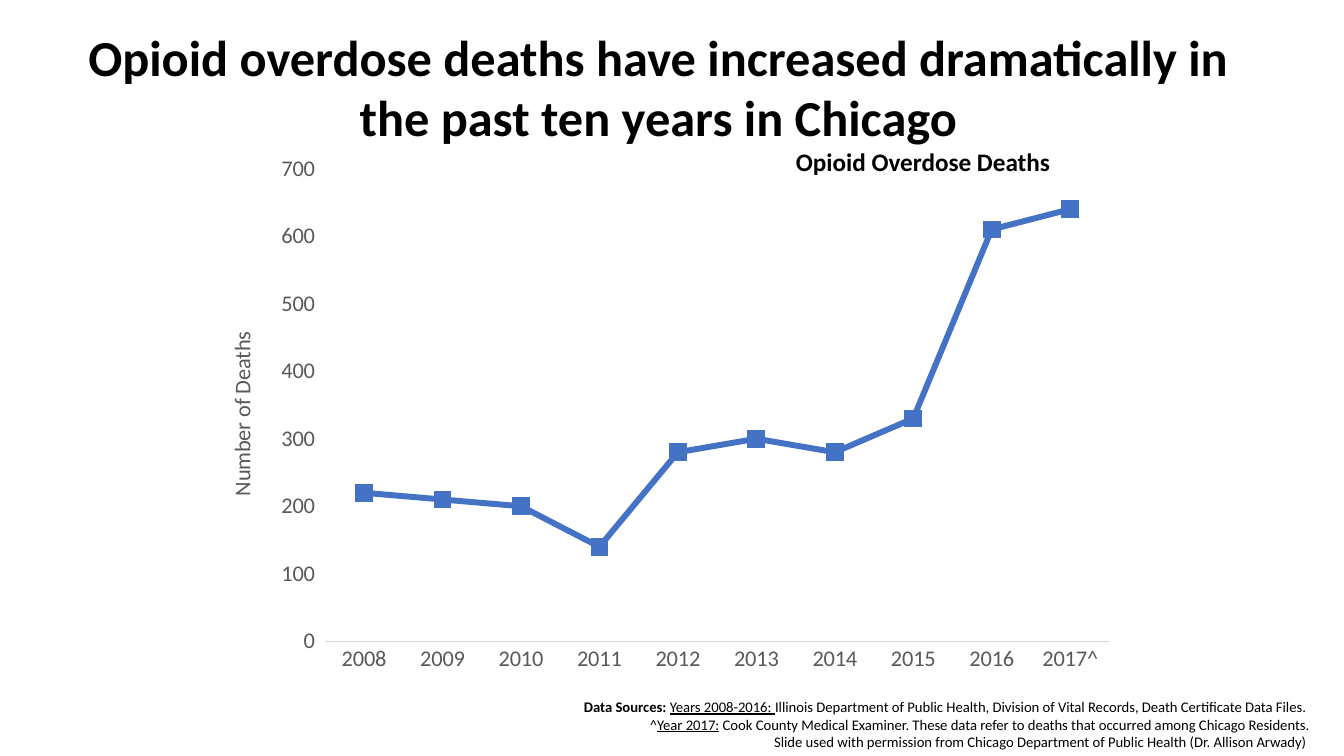
from lxml import etree
from pptx import Presentation
from pptx.chart.data import CategoryChartData
from pptx.dml.color import RGBColor
from pptx.enum.chart import XL_CHART_TYPE, XL_MARKER_STYLE, XL_TICK_MARK
from pptx.enum.text import MSO_AUTO_SIZE, PP_ALIGN
from pptx.oxml.ns import qn
from pptx.util import Pt

EMU_PER_PX = 914400 / 100.8
FONT = "Calibri"
BLACK = RGBColor(0x00, 0x00, 0x00)
GRAY = RGBColor(0x59, 0x59, 0x59)
LIGHT_GRAY = RGBColor(0xD9, 0xD9, 0xD9)
BLUE = RGBColor(0x44, 0x72, 0xC4)
LEFT, CENTER, RIGHT = PP_ALIGN.LEFT, PP_ALIGN.CENTER, PP_ALIGN.RIGHT
LINE_MARKERS = XL_CHART_TYPE.LINE_MARKERS
SQUARE = XL_MARKER_STYLE.SQUARE
TICK_NONE, TICK_OUT = XL_TICK_MARK.NONE, XL_TICK_MARK.OUTSIDE

YEARS = [str(year) for year in range(2008, 2017)] + ["2017^"]
DEATHS = [220, 210, 200, 140, 280, 300, 280, 330, 610, 640]
SOURCES = [
    [("Data Sources: ", True, False),
     ("Years 2008-2016: ", False, True),
     ("Illinois Department of Public Health, Division of Vital Records, "
      "Death Certificate Data Files. ", False, False)],
    [("^", False, False),
     ("Year 2017:", False, True),
     (" Cook County Medical Examiner. These data refer to deaths that "
      "occurred among Chicago Residents.", False, False)],
    [("Slide used with permission from Chicago Department of Public Health "
      "(Dr. Allison Arwady) ", False, False)],
]


def px(n):
    return round(n * EMU_PER_PX)


def set_font(font, size, color, bold=False):
    font.name = FONT
    font.size = Pt(size)
    font.bold = bold
    font.color.rgb = color


def add_text(s, box, paragraphs, size, align):
    tf = s.shapes.add_textbox(*map(px, box)).text_frame
    tf.word_wrap = True
    tf.auto_size = MSO_AUTO_SIZE.SHAPE_TO_FIT_TEXT
    for i, runs in enumerate(paragraphs):
        p = tf.add_paragraph() if i else tf.paragraphs[0]
        p.alignment = align
        for text, bold, underline in runs:
            r = p.add_run()
            r.text = text
            set_font(r.font, size, BLACK, bold)
            r.font.underline = underline


def set_plot_layout(chart, x, y, w, h):
    plot_area = chart.plots[0]._element.getparent()
    for old in plot_area.findall(qn("c:layout")):
        plot_area.remove(old)
    layout = etree.Element(qn("c:layout"))
    plot_area.insert(0, layout)
    manual = etree.SubElement(layout, qn("c:manualLayout"))
    for tag, val in (("layoutTarget", "inner"), ("xMode", "edge"),
                     ("yMode", "edge"), ("x", x), ("y", y),
                     ("w", w), ("h", h)):
        etree.SubElement(manual, qn("c:" + tag)).set("val", str(val))


def style_axis(axis, tick):
    axis.has_major_gridlines = False
    axis.major_tick_mark = tick
    axis.minor_tick_mark = TICK_NONE
    set_font(axis.tick_labels.font, 16, GRAY)


def add_deaths_chart(s, box):
    data = CategoryChartData()
    data.categories = YEARS
    data.add_series("Series 1", DEATHS)
    chart = s.shapes.add_chart(LINE_MARKERS, *map(px, box), data).chart
    chart.has_title = False
    chart.has_legend = False
    set_font(chart.font, 16, BLACK)
    set_plot_layout(chart, 0.116, 0.051, 0.868, 0.869)

    years = chart.category_axis
    style_axis(years, TICK_NONE)
    years.format.line.color.rgb = LIGHT_GRAY
    years.format.line.width = Pt(0.75)

    deaths = chart.value_axis
    style_axis(deaths, TICK_OUT)
    deaths.minimum_scale, deaths.maximum_scale = 0, 700
    deaths.major_unit = 100
    deaths.format.line.fill.background()
    r = deaths.axis_title.text_frame.paragraphs[0].add_run()
    r.text = "Number of Deaths"
    set_font(r.font, 16, GRAY)

    chart.plots[0].vary_by_categories = False
    series = chart.plots[0].series[0]
    series.smooth = False
    series.format.line.color.rgb = BLUE
    series.format.line.width = Pt(4.25)
    marker = series.marker
    marker.style = SQUARE
    marker.size = 12
    marker.format.fill.solid()
    marker.format.fill.fore_color.rgb = BLUE
    marker.format.line.color.rgb = BLUE


def main():
    prs = Presentation()
    prs.slide_width, prs.slide_height = px(1344), px(756)
    s = prs.slides.add_slide(prs.slide_layouts[6])
    add_deaths_chart(s, (220, 141, 904, 544))
    add_text(s, (65, 21, 1187, 132),
             [[("Opioid overdose deaths have increased dramatically in "
                "the past ten years in Chicago", True, False)]], 36, CENTER)
    add_text(s, (786, 141, 288, 40),
             [[("Opioid Overdose Deaths", True, False)]], 18, LEFT)
    add_text(s, (0, 693, 1320, 63), SOURCES, 10.5, RIGHT)
    prs.save("out.pptx")


if __name__ == "__main__":
    main()
